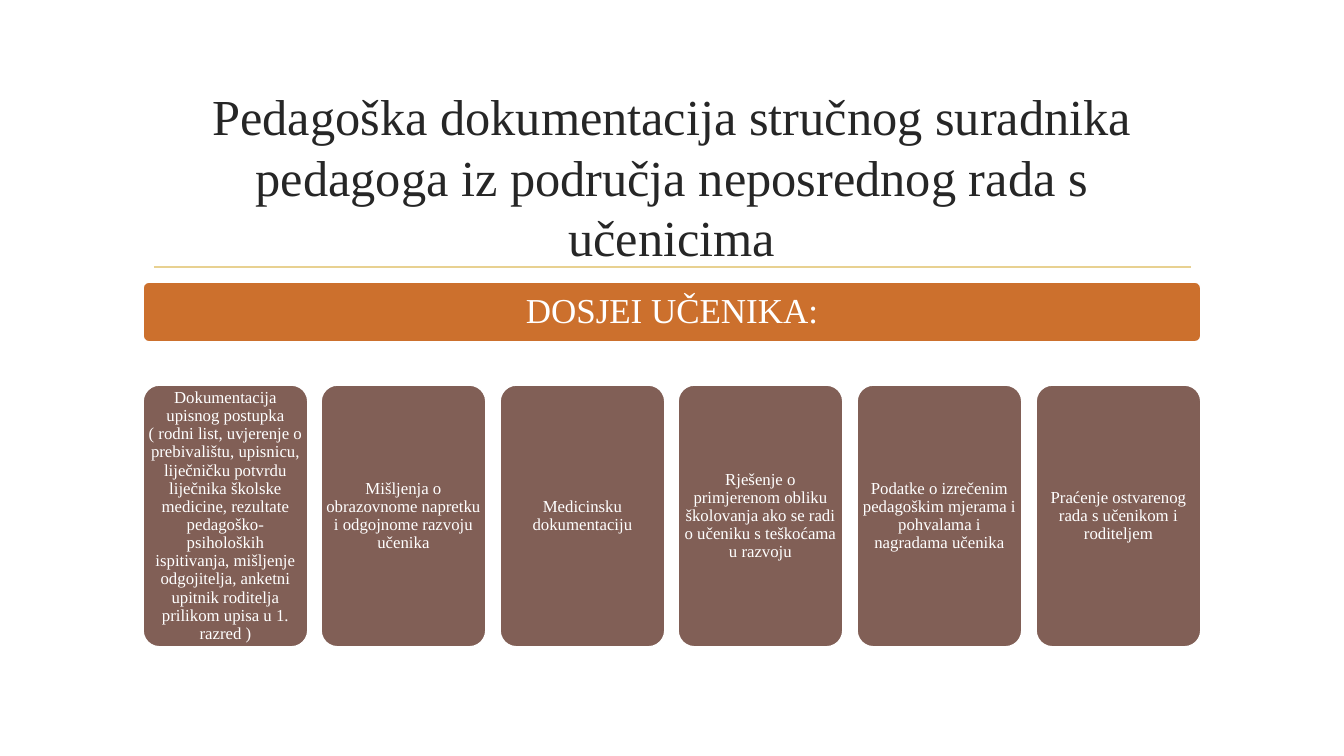
"""Build a slide listing the contents of student files kept by a school pedagogue."""
import pptx
import pptx.util
from lxml import etree
from pptx.dml.color import RGBColor
from pptx.enum.shapes import MSO_CONNECTOR, MSO_SHAPE
from pptx.enum.text import MSO_ANCHOR, PP_ALIGN

INK = RGBColor(0x26, 0x26, 0x26)
WHITE = RGBColor(0xFF, 0xFF, 0xFF)
ORANGE = RGBColor(0xCC, 0x70, 0x2D)
BROWN = RGBColor(0x81, 0x5F, 0x56)
GOLD = RGBColor(0xE8, 0xD1, 0x91)

LEFT, WIDTH = 143, 1058
CARD_WIDTH = 165
CARDS = [
    "Dokumentacija upisnog postupka ( rodni list, uvjerenje o prebivalištu, "
    "upisnicu, liječničku potvrdu liječnika školske medicine, rezultate "
    "pedagoško- psiholoških ispitivanja, mišljenje odgojitelja, anketni upitnik "
    "roditelja prilikom upisa u 1. razred )",
    "Mišljenja o obrazovnome napretku i odgojnome razvoju učenika",
    "Medicinsku dokumentaciju",
    "Rješenje o primjerenom obliku školovanja ako se radi o učeniku s teškoćama u razvoju",
    "Podatke o izrečenim pedagoškim mjerama i pohvalama i nagradama učenika",
    "Praćenje ostvarenog rada s učenikom i roditeljem",
]


def px(length):
    return pptx.util.Emu(round(length * 914400 / 100.8))


def write(shape, text, size, color, spacing, inset):
    frame = shape.text_frame
    frame.word_wrap = True
    frame.vertical_anchor = MSO_ANCHOR.MIDDLE
    frame.margin_left = frame.margin_right = px(inset)
    frame.margin_top = frame.margin_bottom = px(inset)
    para = frame.paragraphs[0]
    para.text = text
    para.alignment = PP_ALIGN.CENTER
    para.line_spacing = spacing
    para.font.name = "Times New Roman"
    para.font.size = pptx.util.Pt(size)
    para.font.color.rgb = color


deck = pptx.Presentation()
deck.slide_width, deck.slide_height = px(1344), px(756)
page = deck.slides.add_slide(deck.slide_layouts[6])

rule = page.shapes.add_connector(MSO_CONNECTOR.STRAIGHT, px(154), px(267), px(1191), px(267))
rule.line.color.rgb = GOLD
rule.line.width = pptx.util.Pt(1.25)
etree.SubElement(rule.element.spPr, pptx.oxml.ns.qn("a:effectLst"))

title = page.shapes.add_textbox(px(LEFT), px(104), px(WIDTH), px(144))
write(title, "Pedagoška dokumentacija stručnog suradnika pedagoga iz područja "
      "neposrednog rada s učenicima", 36, INK, 1.0, 10)

panels = [(LEFT, 282, WIDTH, 60, ORANGE, "DOSJEI UČENIKA:", 25, 8)]
for index, text in enumerate(CARDS):
    left = LEFT + index * (WIDTH - CARD_WIDTH) // (len(CARDS) - 1)
    panels.append((left, 385, CARD_WIDTH, 262, BROWN, text, 12, 0))

for left, top, width, height, fill, text, size, inset in panels:
    panel = page.shapes.add_shape(
        MSO_SHAPE.ROUNDED_RECTANGLE, px(left), px(top), px(width), px(height))
    panel.adjustments[0] = 0.1
    panel.shadow.inherit = False
    panel.fill.solid()
    panel.fill.fore_color.rgb = fill
    panel.line.color.rgb = WHITE
    panel.line.width = pptx.util.Pt(1.25)
    write(panel, text, size, WHITE, 0.9, inset)

deck.save("out.pptx")
